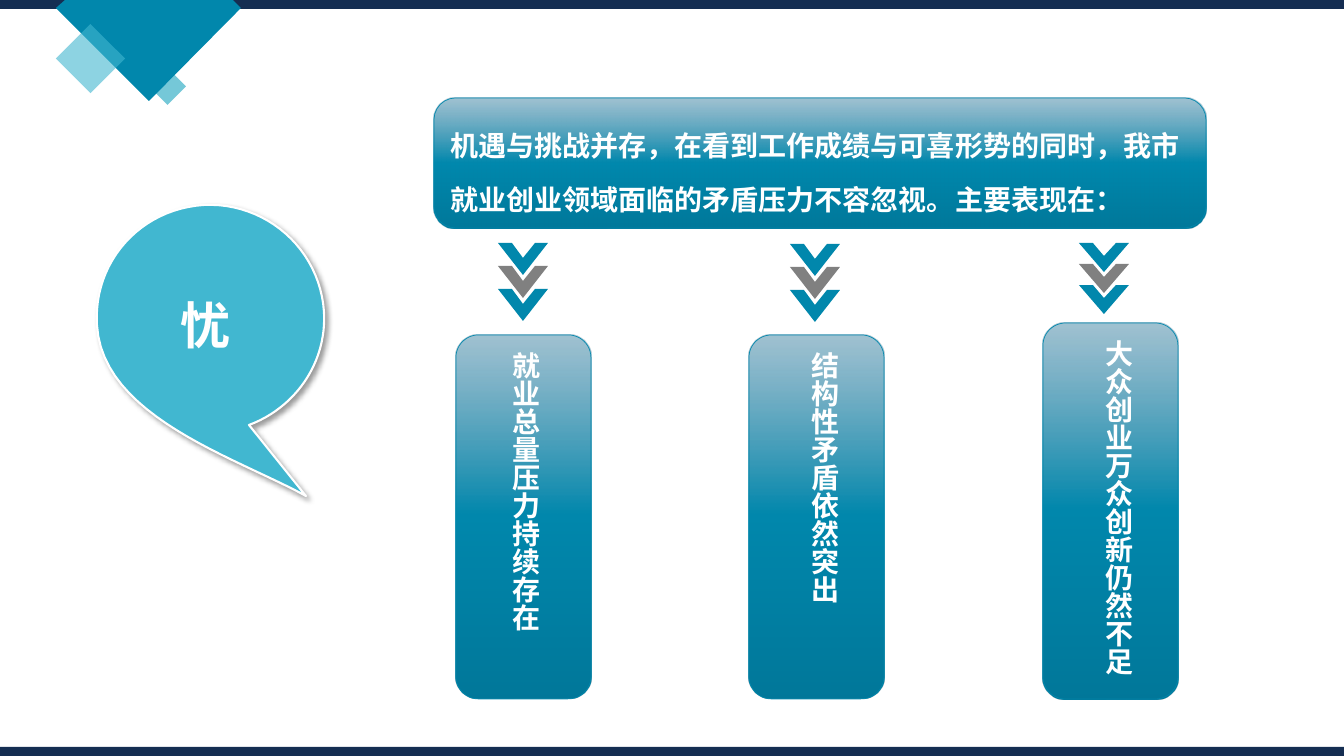
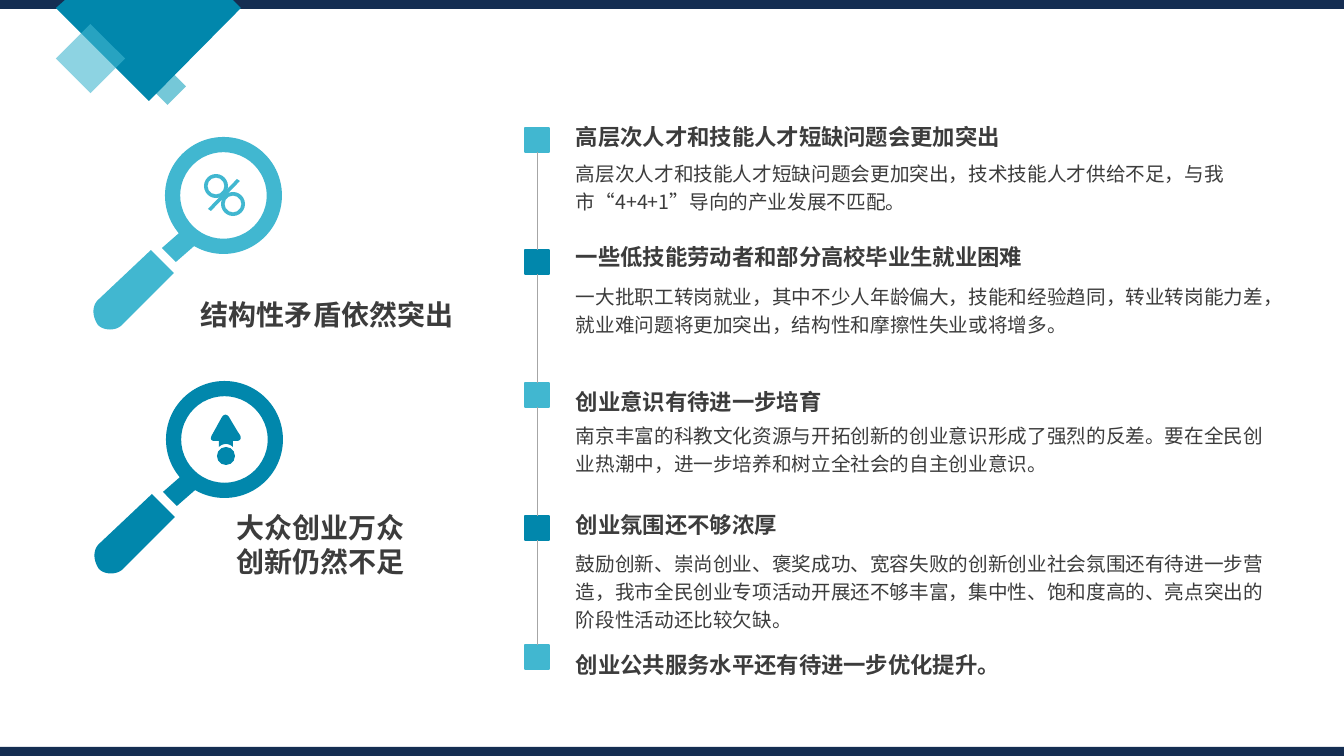
from pptx import Presentation
from pptx import util as u
from pptx.dml.color import RGBColor
from pptx.enum import shapes, text
from pptx.oxml import parse_xml
from pptx.oxml.ns import nsdecls
from lxml import etree

NAVY = RGBColor(0x15, 0x2E, 0x52)
TEAL = RGBColor(0x01, 0x87, 0xAC)
SKY = RGBColor(0x41, 0xB7, 0xD0)
AQUA = RGBColor(0x1A, 0xA4, 0xBE)
GRAY = RGBColor(0x80, 0x80, 0x80)
RULE = RGBColor(0xA6, 0xA6, 0xA6)
INK = RGBColor(0x3C, 0x3C, 0x3C)
WHITE = RGBColor(0xFF, 0xFF, 0xFF)
SANS = "Noto Sans CJK SC"
KIND = shapes.MSO_SHAPE
TOP, MID = text.MSO_ANCHOR.TOP, text.MSO_ANCHOR.MIDDLE
LEFT, CENTER = text.PP_ALIGN.LEFT, text.PP_ALIGN.CENTER
SCALE = 914400 / 100.8
WIDE, HIGH, BAND = 1344, 756, 9

LIGHT = dict(name="Arial", size=u.Pt(20), bold=True)
HEAD = dict(name=SANS, size=u.Pt(20), bold=True)
ITEM = dict(name=SANS, size=u.Pt(16), bold=True)
BODY = dict(name=SANS, size=u.Pt(14), bold=False)

SHADE = [(0, "4B8BA9", 52), (50, "0088AD", 100), (100, "00789A", 100)]
LEAD = "机遇与挑战并存，在看到工作成绩与可喜形势的同时，我市就业创业领域面临的矛盾压力不容忽视。主要表现在："
PILLARS = [
    ("就业总量压力持续存在", 456, 335, CENTER, 10),
    ("结构性矛盾依然突出", 749, 335, LEFT, 22),
    ("大众创业万众创新仍然不足", 1043, 323, CENTER, 22),
]
STACKS = [(498, 243, 23, 32), (790, 244, 23, 32), (1079, 243, 21, 29)]
BUBBLE = [
    (204, 205), (266, 202, 320, 249, 324, 312),
    (327, 363, 295, 408, 249, 425), (306, 496),
    (237, 458, 102, 417, 97, 325), (93, 262, 140, 209, 204, 205),
]

TOPICS = [
    (["结构性矛盾依然突出"], (191, 293, 275, 44), LEFT),
    (["大众创业万众", "创新仍然不足"], (191, 506, 260, 78), CENTER),
]
ROWS = [
    (128, 118, "高层次人才和技能人才短缺问题会更加突出", 152, 735,
     "高层次人才和技能人才短缺问题会更加突出，技术技能人才供给不足，与我市“4+4+1”导向的产业发展不匹配。"),
    (250, 238, "一些低技能劳动者和部分高校毕业生就业困难", 275, 735,
     "一大批职工转岗就业，其中不少人年龄偏大，技能和经验趋同，转业转岗能力差，就业难问题将更加突出，结构性和摩擦性失业或将增多。"),
    (383, 383, "创业意识有待进一步培育", 414, 713,
     "南京丰富的科教文化资源与开拓创新的创业意识形成了强烈的反差。要在全民创业热潮中，进一步培养和树立全社会的自主创业意识。"),
    (516, 506, "创业氛围还不够浓厚", 542, 713,
     "鼓励创新、崇尚创业、褒奖成功、宽容失败的创新创业社会氛围还有待进一步营造，我市全民创业专项活动开展还不够丰富，集中性、饱和度高的、亮点突出的阶段性活动还比较欠缺。"),
    (645, 646, "创业公共服务水平还有待进一步优化提升。", 0, 0, ""),
]
NECK = [(200, 241), (176, 262), (162, 248), (186, 227)]
GRIP = [(151, 250), (98, 300), (92, 306, 92, 316, 98, 325),
        (104, 331, 116, 331, 122, 325), (174, 273)]
SLASH = [(240, 181), (211, 211), (208, 209), (237, 179)]
ARROW = [
    (238, 432), (229, 417), (227, 414, 224, 414, 222, 417), (212, 435),
    (210, 439, 211, 441, 215, 441), (219, 441), (219, 447),
    (223, 443, 229, 443, 233, 447), (233, 441), (236, 441),
    (240, 441, 242, 439, 240, 435),
]


def px(n):
    return u.Emu(round(n * SCALE))


def dress(shape, color):
    shape.shadow.inherit = False
    shape.fill.solid()
    shape.fill.fore_color.rgb = color
    shape.line.fill.background()
    return shape


def fade(fill, pct):
    for node in fill.iter("{*}srgbClr"):
        node.append(parse_xml(f'<a:alpha {nsdecls("a")} val="{pct * 1000}"/>'))


def block(slide, kind, box, color, adj=None):
    shape = dress(slide.shapes.add_shape(kind, *map(px, box)), color)
    if adj is not None:
        shape.adjustments[0] = adj
    return shape


def trace(slide, path, color, dx=0, dy=0):
    dots = [path[0]]
    for step in path[1:]:
        if len(step) == 2:
            dots.append(step)
            continue
        a, b, c, d = dots[-1], step[:2], step[2:4], step[4:]
        for i in range(1, 25):
            t = i / 24
            s = 1 - t
            dots.append(tuple(
                s**3 * a[k] + 3 * s * s * t * b[k] + 3 * s * t * t * c[k] + t**3 * d[k]
                for k in (0, 1)))
    dots = [(px(x + dx), px(y + dy)) for x, y in dots]
    pen = slide.shapes.build_freeform(*dots[0], scale=1.0)
    pen.add_line_segments(dots[1:], close=True)
    return dress(pen.convert_to_shape(), color)


def write(frame, lines, look, color, align=LEFT, anchor=TOP, gap=None):
    frame.word_wrap = True
    frame.vertical_anchor = anchor
    for i, line in enumerate(lines):
        para = frame.add_paragraph() if i else frame.paragraphs[0]
        para.alignment = align
        if gap:
            para.line_spacing = gap
        run = para.add_run()
        run.text = line
        for key, val in look.items():
            setattr(run.font, key, val)
        run.font.color.rgb = color
        props = run._r.get_or_add_rPr()
        props.set("lang", "zh-CN")
        etree.SubElement(props, "{http://schemas.openxmlformats.org/drawingml/2006/main}ea",
                         typeface=SANS)


def label(slide, box, lines, look, color, **opts):
    frame = slide.shapes.add_textbox(*map(px, box)).text_frame
    write(frame, lines, look, color, **opts)
    return frame


def panel(slide, box):
    shape = block(slide, KIND.ROUNDED_RECTANGLE, box, TEAL)
    props = shape._element.spPr
    stops = "".join(
        f'<a:gs pos="{pos * 1000}"><a:srgbClr val="{tone}">'
        f'<a:alpha val="{pct * 1000}"/></a:srgbClr></a:gs>'
        for pos, tone, pct in SHADE)
    props.replace(props.find("{*}solidFill"), parse_xml(
        f'<a:gradFill {nsdecls("a")} rotWithShape="1"><a:gsLst>{stops}</a:gsLst>'
        '<a:lin ang="5400000" scaled="0"/></a:gradFill>'))
    shape.line.color.rgb = TEAL
    shape.line.width = u.Pt(0.5)
    fade(props.find("{*}ln"), 95)
    return shape


def frame_layout(layout, slide):
    for hold in list(layout.placeholders):
        hold.element.getparent().remove(hold.element)
    small = block(slide, KIND.DIAMOND, (149, 68, 37, 37), AQUA)
    parts = [small, block(slide, KIND.RECTANGLE, (0, 0, WIDE, BAND), NAVY)]
    parts.append(trace(slide, [(65, 0), (233, 0), (241, 8), (149, 101), (56, 8)], TEAL))
    large = block(slide, KIND.DIAMOND, (56, 24, 69, 69), SKY)
    parts += [large, block(slide, KIND.RECTANGLE, (0, HIGH - BAND, WIDE, BAND), NAVY)]
    for gem in (small, large):
        fade(gem._element.spPr, 60)
    for part in parts:
        layout.shapes.element.append(part._element)


def worry(slide):
    drop = trace(slide, BUBBLE, SKY)
    drop.line.color.rgb = WHITE
    drop.line.width = u.Pt(1.5)
    drop._element.spPr.find("{*}effectLst").append(parse_xml(
        f'<a:outerShdw {nsdecls("a")} blurRad="50800" dist="38100" dir="2700000" algn="tl">'
        '<a:srgbClr val="000000"><a:alpha val="40000"/></a:srgbClr></a:outerShdw>'))
    label(slide, (171, 289, 84, 72), ["忧"], dict(LIGHT, size=u.Pt(36)), WHITE)
    lead = panel(slide, (434, 98, 772, 130))
    write(lead.text_frame, [LEAD], LIGHT, WHITE, gap=u.Pt(38))
    for x, y, step, tall in STACKS:
        notch = tall * 15 // 32
        mark = [(0, 0), (14, 0), (25, notch), (37, 0), (50, 0), (25, tall)]
        for i, color in enumerate((TEAL, GRAY, TEAL)):
            trace(slide, mark, color, x, y + i * step)
    for line, x, y, align, inset in PILLARS:
        frame = panel(slide, (x, y, 135, 699 - y)).text_frame
        write(frame, [line], LIGHT, WHITE, align=align, anchor=MID)
        frame.margin_left = px(inset)
        frame._txBody.bodyPr.set("vert", "eaVert")


def lens(slide, color, dx, dy):
    trace(slide, NECK, color, dx, dy)
    block(slide, KIND.DONUT, (165 + dx, 137 + dy, 117, 117), color, 0.13)
    trace(slide, GRIP, color, dx, dy)


def detail(slide):
    lens(slide, SKY, 0, 0)
    for x, y in ((204, 174), (221, 192)):
        block(slide, KIND.DONUT, (x, y, 24, 24), SKY, 0.15)
    trace(slide, SLASH, SKY)
    lens(slide, TEAL, 1, 244)
    trace(slide, ARROW, TEAL)
    block(slide, KIND.OVAL, (217, 447, 18, 18), TEAL)
    for lines, box, align in TOPICS:
        label(slide, box, lines, HEAD, INK, align=align)
    last = None
    for i, (y, top, head, low, wide, body) in enumerate(ROWS):
        color = (SKY, TEAL)[i % 2]
        mark = block(slide, KIND.RECTANGLE, (525, y, 24, 24), color)
        mark.line.color.rgb = color
        mark.line.width = u.Pt(1)
        if last:
            link = slide.shapes.add_connector(shapes.MSO_CONNECTOR.STRAIGHT, 0, 0, 0, 0)
            link.begin_connect(last, 2)
            link.end_connect(mark, 0)
            link.line.color.rgb = RULE
            link.line.width = u.Pt(0.5)
            link._element.spPr.append(parse_xml(f'<a:effectLst {nsdecls("a")}/>'))
        last = mark
        label(slide, (566, top, 500, 37), [head], ITEM, INK)
        if body:
            label(slide, (566, low, wide, 67), [body], BODY, INK, gap=1.2)


def main():
    deck = Presentation()
    deck.slide_width, deck.slide_height = px(WIDE), px(HIGH)
    blank = deck.slide_layouts[6]
    first, second = (deck.slides.add_slide(blank) for _ in range(2))
    frame_layout(blank, first)
    worry(first)
    detail(second)
    deck.save("out.pptx")


if __name__ == "__main__":
    main()
